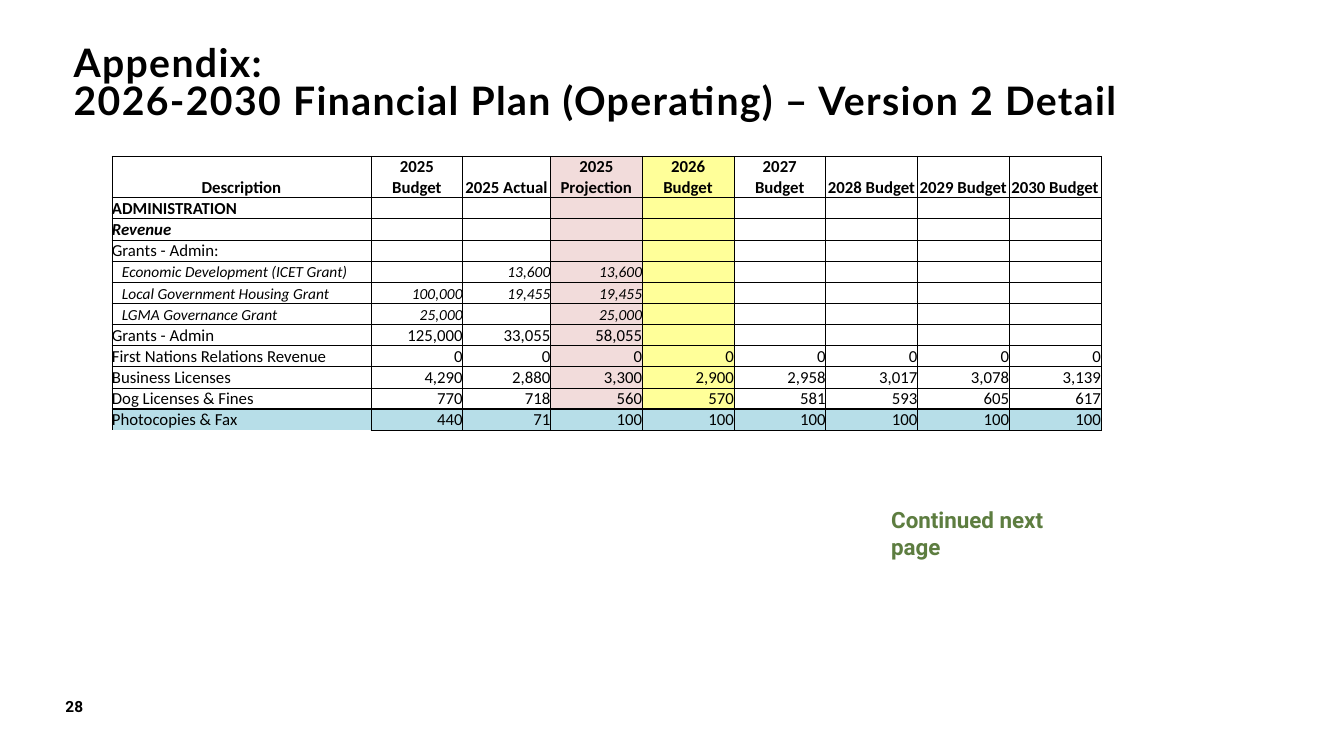
from dataclasses import dataclass

from lxml import etree
from pptx import Presentation
from pptx.dml.color import RGBColor
from pptx.enum.text import MSO_ANCHOR as Anchor, MSO_AUTO_SIZE as AutoSize, PP_ALIGN as Align
from pptx.oxml.ns import qn
from pptx.util import Inches, Pt

TITLE = "Appendix:\v2026-2030 Financial Plan (Operating) – Version 2 Detail"
CONTINUED = "Continued next page"
PAGE_NUMBER = "28"
HEADINGS = ["Description", "2025\vBudget", "2025 Actual", "2025 Projection", "2026\vBudget",
            "2027\vBudget", "2028 Budget", "2029 Budget", "2030 Budget"]
ROWS = [
    ("section", ["ADMINISTRATION"]),
    ("group", ["Revenue"]),
    ("line", ["Grants - Admin:"]),
    ("detail", ["Economic Development (ICET Grant)", "", "13,600", "13,600"]),
    ("detail", ["Local Government Housing Grant", "100,000", "19,455", "19,455"]),
    ("detail", ["LGMA Governance Grant", "25,000", "", "25,000"]),
    ("line", ["Grants - Admin", "125,000", "33,055", "58,055"]),
    ("line", ["First Nations Relations Revenue"] + ["0"] * 8),
    ("line", ["Business Licenses", "4,290", "2,880", "3,300", "2,900",
              "2,958", "3,017", "3,078", "3,139"]),
    ("line", ["Dog Licenses & Fines", "770", "718", "560", "570", "581", "593", "605", "617"]),
    ("highlight", ["Photocopies & Fax", "440", "71"] + ["100"] * 6),
]
COLUMN_WIDTHS = [2.57, 0.91, 0.87] + [0.91] * 6
HEADING_HEIGHT, ROW_HEIGHT = 0.41, 0.21
DETAIL_INDENT = 0.1


@dataclass(frozen=True)
class Theme:
    ink: str = "000000"
    green: str = "5D7D40"
    projection: str = "F2DCDB"
    budget: str = "FFFF99"
    highlight: str = "B7DEE8"
    title_font: str = "Lato"
    table_font: str = "Calibri"
    label_font: str = "Roboto"
    title_size: int = 28
    label_size: int = 16
    table_size: int = 12
    detail_size: int = 11
    number_size: int = 11
    thin: float = 0.5
    thick: float = 1


THEME = Theme()
COLUMN_FILLS = {3: THEME.projection, 4: THEME.budget}


def style(para, font_name, size, color=THEME.ink, bold=False, italic=False, align=Align.LEFT):
    para.alignment = align
    font = para.font
    font.name, font.size, font.bold, font.italic = font_name, Pt(size), bold, italic
    font.color.rgb = RGBColor.from_string(color)


def add_label(page, text, area, size, color, margin=None):
    box = page.shapes.add_textbox(*map(Inches, area))
    frame = box.text_frame
    frame.word_wrap = True
    if margin is not None:
        frame.margin_left = frame.margin_right = Inches(margin)
        frame.margin_top = frame.margin_bottom = Inches(margin)
    frame.text = text
    style(frame.paragraphs[0], THEME.label_font, size, color, bold=True)


def add_border(cell, side, width):
    line = etree.SubElement(cell._tc.get_or_add_tcPr(), qn(f"a:ln{side}"), w=str(Pt(width)))
    if width:
        fill = etree.SubElement(line, qn("a:solidFill"))
        etree.SubElement(fill, qn("a:srgbClr"), val=THEME.ink)
    else:
        etree.SubElement(line, qn("a:noFill"))


def fill_cell(cell, text, kind, column, above, below):
    cell.margin_left = cell.margin_right = cell.margin_top = cell.margin_bottom = 0
    cell.vertical_anchor = Anchor.BOTTOM
    for side, width in (("L", THEME.thin), ("R", THEME.thin), ("T", above), ("B", below)):
        add_border(cell, side, width)
    color = THEME.highlight if kind == "highlight" else COLUMN_FILLS.get(column)
    if color:
        cell.fill.solid()
        cell.fill.fore_color.rgb = RGBColor.from_string(color)
    else:
        cell.fill.background()
    if kind == "detail" and column == 0:
        cell.margin_left = Inches(DETAIL_INDENT)
    size = THEME.detail_size if kind == "detail" else THEME.table_size
    para = cell.text_frame.paragraphs[0]
    if text:
        cell.text = text
        para = cell.text_frame.paragraphs[0]
    align = Align.CENTER if kind == "heading" else Align.RIGHT if column else Align.LEFT
    style(para, THEME.table_font, size, bold=kind in ("heading", "section", "group"),
          italic=kind in ("group", "detail"), align=align)
    if not text:
        etree.SubElement(para._p, qn("a:endParaRPr"), sz=str(size * 100))


def add_budget_table(page):
    rows = [("heading", HEADINGS)] + ROWS
    heights = [HEADING_HEIGHT] + [ROW_HEIGHT] * len(ROWS)
    area = (1.11, 1.55, sum(COLUMN_WIDTHS), sum(heights))
    table = page.shapes.add_table(len(rows), len(HEADINGS), *map(Inches, area)).table
    table.first_row = table.horz_banding = False
    for column, width in zip(table.columns, COLUMN_WIDTHS):
        column.width = Inches(width)
    last = len(rows) - 1
    for r, (kind, texts) in enumerate(rows):
        table.rows[r].height = Inches(heights[r])
        above = THEME.thick if r == last else THEME.thin
        padded = texts + [""] * (len(HEADINGS) - len(texts))
        for c, text in enumerate(padded):
            below = THEME.thick if r == last - 1 else THEME.thin
            if r == last and c == 0:
                below = 0
            fill_cell(table.cell(r, c), text, kind, c, above, below)


def add_title(page):
    title = page.shapes.title
    title.left, title.top, title.width, title.height = map(Inches, (0.73, -0.12, 11.57, 1.34))
    frame = title.text_frame
    frame.margin_left = frame.margin_right = frame.margin_top = frame.margin_bottom = 0
    frame.vertical_anchor = Anchor.BOTTOM
    frame.word_wrap = True
    frame.auto_size = AutoSize.NONE
    frame.text = TITLE
    para = frame.paragraphs[0]
    para.line_spacing = 0.8
    style(para, THEME.title_font, THEME.title_size, bold=True)
    para._p.pPr.find(qn("a:defRPr")).set("spc", "100")


def main():
    deck = Presentation()
    deck.slide_width, deck.slide_height = Inches(13.33), Inches(7.5)
    page = deck.slides.add_slide(deck.slide_layouts[5])
    add_title(page)
    add_label(page, CONTINUED, (8.74, 4.97, 2.15, 0.37), THEME.label_size, THEME.green)
    add_budget_table(page)
    add_label(page, PAGE_NUMBER, (0.65, 6.92, 0.57, 0.27), THEME.number_size, THEME.ink, margin=0)
    deck.save("out.pptx")


if __name__ == "__main__":
    main()
